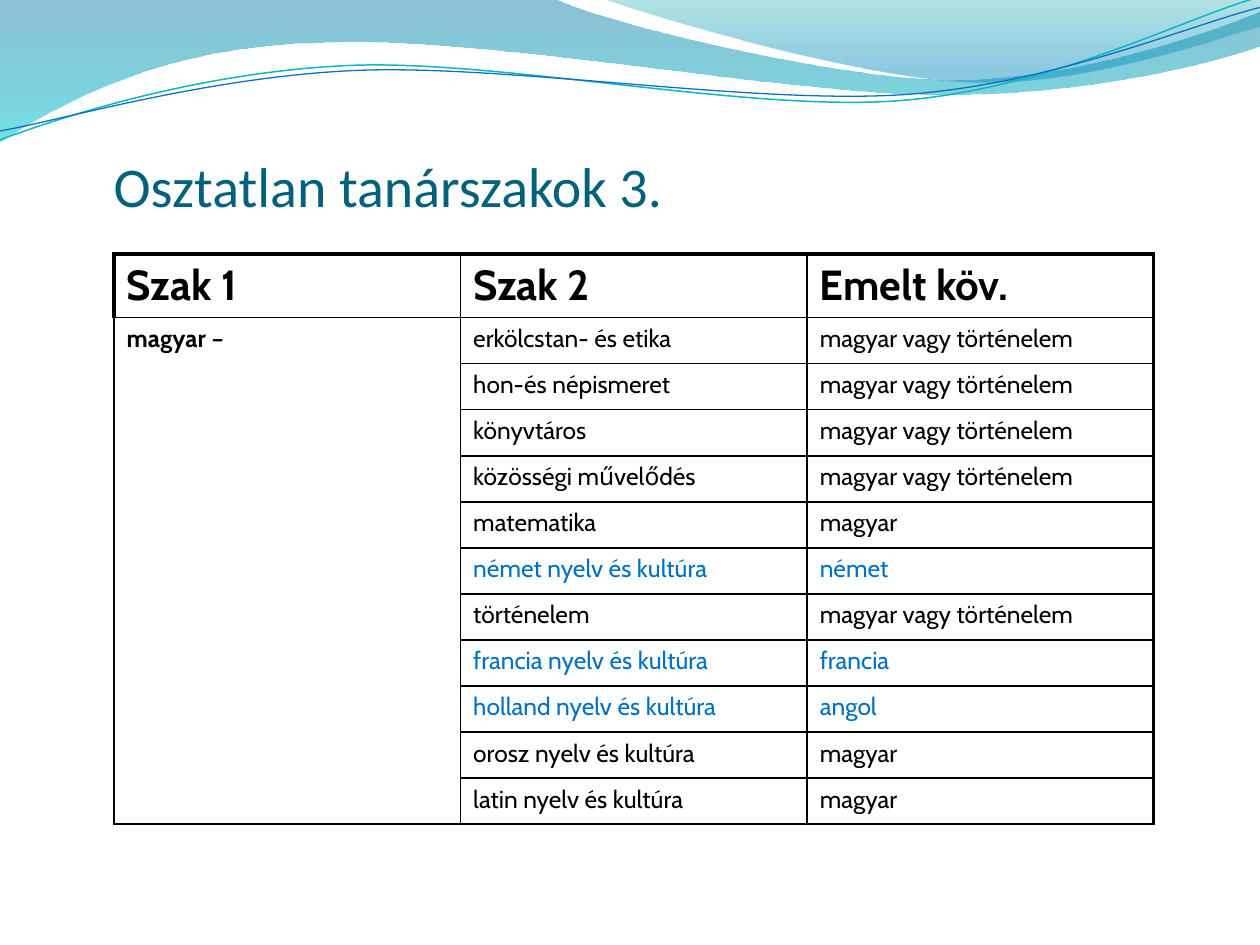
import math

from lxml import etree
from pptx import Presentation, util as u
from pptx.dml.color import RGBColor
from pptx.enum import text
from pptx.oxml import ns

BLACK, BLUE, TITLE_COLOR = "000000", "0070C0", "04617B"
THIN, THICK = 1, 2.25
WAVE_ANGLE = 357.3

# Outlines in cm: one pair is a straight step, three pairs are a Bézier curve.
BAND = [((11.18, -0.03),),
        ((12.09, 0.43), (16.87, 1.6), (19.25, 1.6)),
        ((21.67, 1.6), (24.33, 0.66), (25.4, 0.23)),
        ((25.43, 0.91),),
        ((24.97, 1.12), (22.1, 1.93), (18.95, 1.91)),
        ((15.8, 1.91), (9.7, 0.71), (6.53, 0.86)),
        ((3.28, 0.89), (1.17, 2.11), (-0.03, 2.87)),
        ((0, -0.03),)]
CREST = [((12.93, 0.28), (17.32, 1.57), (19.53, 1.65)),
         ((21.74, 1.75), (24.41, 0.81), (25.4, 0.53)),
         ((25.4, 0),),
         ((12.17, -0.03),)]
TEAL_WAVE = [((1.22, 2.36), (4.01, 1.45), (7.04, 1.32)),
             ((10.03, 1.19), (15.06, 2.26), (18.11, 2.03)),
             ((21.16, 1.8), (23.83, 0.38), (25.35, -0.05))]
BLUE_WAVE = [((1.19, 2.44), (4.17, 1.55), (7.19, 1.42)),
             ((10.24, 1.3), (15.16, 2.11), (18.21, 1.91)),
             ((21.23, 1.7), (23.9, 0.53), (25.4, 0.15))]

HEADERS = ["Szak 1", "Szak 2", "Emelt köv."]
FIRST_SUBJECT = "magyar –"
EITHER = "magyar vagy történelem"
PAIRS = [("erkölcstan- és etika", EITHER, BLACK),
         ("hon-és népismeret", EITHER, BLACK),
         ("könyvtáros", EITHER, BLACK),
         ("közösségi művelődés", EITHER, BLACK),
         ("matematika", "magyar", BLACK),
         ("német nyelv és kultúra", "német", BLUE),
         ("történelem", EITHER, BLACK),
         ("francia nyelv és kultúra", "francia", BLUE),
         ("holland nyelv és kultúra", "angol", BLUE),
         ("orosz nyelv és kultúra", "magyar", BLACK),
         ("latin nyelv és kultúra", "magyar", BLACK)]


def rgb(value):
    return RGBColor.from_string(value)


def write(frame, words, size=14, font="Cabin", color=BLACK, bold=False):
    para = frame.paragraphs[0]
    para.alignment = text.PP_ALIGN.LEFT
    span = para.add_run()
    span.text = words
    span.font.size = u.Pt(size)
    span.font.name = font
    span.font.bold = bold
    span.font.color.rgb = rgb(color)


def turn(point, center, degrees):
    angle = math.radians(degrees)
    dx, dy = point[0] - center[0], point[1] - center[1]
    return (center[0] + dx * math.cos(angle) - dy * math.sin(angle),
            center[1] + dx * math.sin(angle) + dy * math.cos(angle))


def set_border(cell, side, width):
    line = etree.SubElement(cell._tc.get_or_add_tcPr(), ns.qn("a:ln" + side),
                            w=str(u.Pt(width)))
    fill = etree.SubElement(line, ns.qn("a:solidFill"))
    etree.SubElement(fill, ns.qn("a:srgbClr"), val=BLACK)


class SlideMaker:
    def __init__(self, deck):
        self.slide = deck.slides.add_slide(deck.slide_layouts[5])

    def outline(self, start, steps, closed):
        """Draw a freeform, joining each three-point step into one curve."""
        points = [(u.Cm(x), u.Cm(y)) for step in steps for x, y in step]
        builder = self.slide.shapes.build_freeform(u.Cm(start[0]), u.Cm(start[1]))
        builder.add_line_segments(points, close=closed)
        shape = builder.convert_to_shape()
        shape.shadow.inherit = False
        segments = iter(list(shape._element.iter(ns.qn("a:lnTo"))))
        for step in steps:
            group = [next(segments) for _ in step]
            if len(group) == 3:
                curve = etree.Element(ns.qn("a:cubicBezTo"))
                group[0].addprevious(curve)
                for segment in group:
                    curve.append(segment[0])
                    segment.getparent().remove(segment)
        return shape

    def gradient_area(self, start, steps, stops):
        """Stops are (position, colour, opacity in percent), from the top down."""
        shape = self.outline(start, steps, True)
        shape.line.fill.background()
        shape.fill.gradient()
        shape.fill.gradient_angle = 270
        for stop, (position, color, opacity) in zip(shape.fill.gradient_stops, stops):
            stop.position = position
            stop.color.rgb = rgb(color)
            color_node = stop._gs.find(ns.qn("a:srgbClr"))
            etree.SubElement(color_node, ns.qn("a:alpha"), val=str(opacity * 1000))

    def wave(self, start, steps, center, color, width):
        """Draw the line level, then rotate it to run through its points."""
        level = [[turn(point, center, -WAVE_ANGLE) for point in step] for step in steps]
        shape = self.outline(turn(start, center, -WAVE_ANGLE), level, False)
        shape.rotation = WAVE_ANGLE
        shape.fill.background()
        shape.line.color.rgb = rgb(color)
        shape.line.width = u.Pt(width)

    def title(self, words):
        box = self.slide.shapes.title
        box.left, box.top, box.width, box.height = map(u.Cm, (2.29, 2.13, 20.96, 2.29))
        frame = box.text_frame
        frame.auto_size = text.MSO_AUTO_SIZE.NONE
        frame.vertical_anchor = text.MSO_ANCHOR.BOTTOM
        frame.margin_left = frame.margin_right = frame.margin_bottom = 0
        frame.margin_top = u.Cm(0.13)
        write(frame, words, size=32, font="Calibri", color=TITLE_COLOR)

    def subject_table(self):
        row_count, column_count = len(PAIRS) + 1, len(HEADERS)
        width, height, header_height = 20.96, 11.49, 1.28
        row_height = (height - header_height) / len(PAIRS)
        table = self.slide.shapes.add_table(
            row_count, column_count, u.Cm(2.3), u.Cm(5.12),
            u.Cm(width), u.Cm(height)).table
        table.first_row = table.horz_banding = False
        for column in table.columns:
            column.width = u.Cm(width / column_count)
        for r, row in enumerate(table.rows):
            row.height = u.Cm(row_height if r else header_height)
            for c, cell in enumerate(row.cells):
                set_border(cell, "L", THICK if r == c == 0 else THIN)
                set_border(cell, "R", THICK if c == column_count - 1 else THIN)
                set_border(cell, "T", THIN if r else THICK)
                set_border(cell, "B", THIN)
                cell.fill.background()
        table.cell(1, 0).merge(table.cell(row_count - 1, 0))

        for c, words in enumerate(HEADERS):
            write(table.cell(0, c).text_frame, words, size=24, bold=True)
        write(table.cell(1, 0).text_frame, FIRST_SUBJECT, bold=True)
        for r, (subject, requirement, color) in enumerate(PAIRS, 1):
            write(table.cell(r, 1).text_frame, subject, color=color)
            write(table.cell(r, 2).text_frame, requirement, color=color)


def main():
    deck = Presentation()
    deck.slide_width, deck.slide_height = u.Cm(25.4), u.Cm(19.05)
    page = SlideMaker(deck)
    page.gradient_area((0, -0.03), BAND, [(0, "0074A1", 45), (1, "00C6CF", 55)])
    page.gradient_area((12.17, -0.03), CREST, [(0, "00A1A9", 30), (0.8, "008BBF", 45)])
    page.wave((0, 2.82), TEAL_WAVE, (12.67, 1.46), "0AB8BF", 0.85)
    page.wave((0, 2.64), BLUE_WAVE, (12.69, 1.5), "0F6FC6", 0.75)
    page.title("Osztatlan tanárszakok 3.")
    page.subject_table()
    deck.save("out.pptx")


if __name__ == "__main__":
    main()
